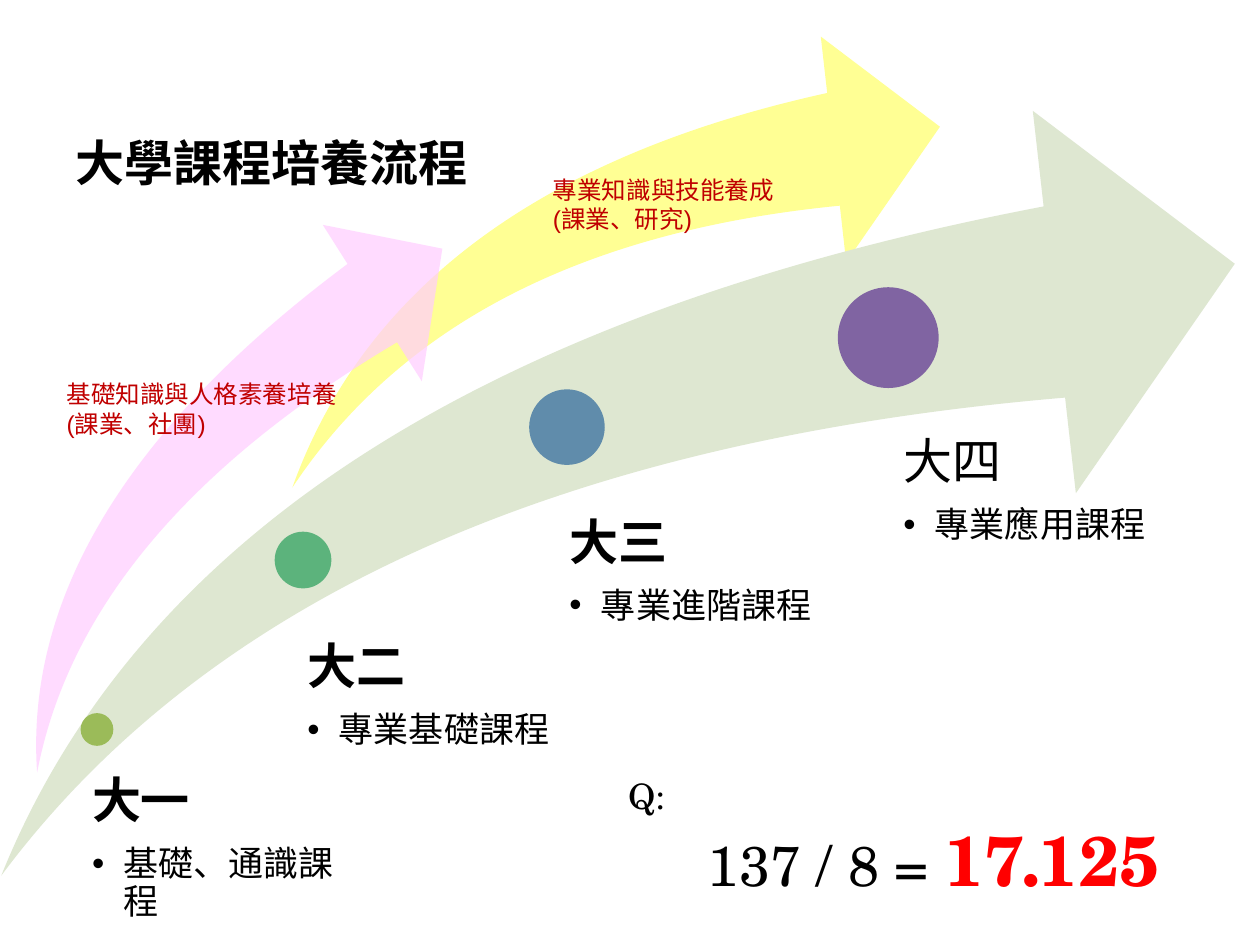
"""Build a slide showing how four years of university courses follow one another."""
from dataclasses import dataclass

from lxml.etree import SubElement
from pptx import Presentation
from pptx.dml.color import RGBColor
from pptx.enum.shapes import MSO_SHAPE
from pptx.enum.text import MSO_ANCHOR, MSO_AUTO_SIZE, PP_ALIGN
from pptx.oxml.ns import qn
from pptx.util import Pt

SCALE = 9144
SERIF, SANS = "TeX Gyre Schola", "Arial"
HUES = {
    "yellow": "FFFF00", "sage": "DEE7D1", "pink": "FFCCFF",
    "lime": "9BBB59", "green": "5CB37C", "blue": "608CAB", "purple": "8064A2",
    "black": "000000", "crimson": "C00000", "red": "FF0000",
}


@dataclass(frozen=True)
class Box:
    left: int
    top: int
    width: int
    height: int

    def emu(self) -> tuple[int, ...]:
        return tuple(n * SCALE for n in (self.left, self.top, self.width, self.height))


@dataclass(frozen=True)
class Arrow:
    box: Box
    hue: str
    alpha: int = 100
    turn: float = 0


@dataclass(frozen=True)
class Year:
    name: str
    course: str
    dot: Box
    hue: str
    box: Box
    inset: int
    bold: bool = True


@dataclass(frozen=True)
class Label:
    lines: str
    box: Box


ARROWS = [
    Arrow(Box(232, 29, 514, 358), "yellow", 42),
    Arrow(Box(1, 88, 979, 607), "sage"),
    Arrow(Box(-58, 233, 471, 292), "pink", 70, 334.1),
]
YEARS = [
    Year("大一", "基礎、通識課程", Box(64, 566, 26, 26), "lime", Box(59, 616, 232, 168), 14),
    Year("大二", "專業基礎課程", Box(218, 422, 45, 45), "green", Box(220, 510, 237, 263), 24),
    Year("大三", "專業進階課程", Box(420, 309, 60, 60), "blue", Box(420, 411, 237, 265), 32),
    Year("大四", "專業應用課程", Box(665, 228, 80, 80), "purple", Box(675, 347, 237, 326), 42, False),
]
LABELS = [
    Label("專業知識與技能養成\n(課業、研究)", Box(429, 134, 213, 57)),
    Label("基礎知識與人格素養培養\n(課業、社團)", Box(43, 296, 268, 57)),
]


def style(run, size: int, hue: str = "black", bold: bool = False, face: str = SERIF) -> None:
    font = run.font
    font.size, font.bold, font.name = Pt(size), bold, face
    font.color.rgb = RGBColor.from_string(HUES[hue])


def indent(para, left: int, first: int = 0) -> None:
    props = para._p.get_or_add_pPr()
    props.set("marL", str(left * SCALE))
    props.set("indent", str(first * SCALE))


def add_shape(slide, kind: MSO_SHAPE, box: Box, hue: str):
    shape = slide.shapes.add_shape(kind, *box.emu())
    shape.shadow.inherit = False
    shape.fill.solid()
    shape.fill.fore_color.rgb = RGBColor.from_string(HUES[hue])
    shape.line.fill.background()
    return shape


def add_arrow(slide, arrow: Arrow) -> None:
    shape = add_shape(slide, MSO_SHAPE.SWOOSH_ARROW, arrow.box, arrow.hue)
    shape.adjustments[0] = shape.adjustments[1] = 0.25
    shape.rotation = arrow.turn
    if arrow.alpha < 100:
        color = shape._element.spPr.find(f"{qn('a:solidFill')}/{qn('a:srgbClr')}")
        SubElement(color, qn("a:alpha")).set("val", str(arrow.alpha * 1000))


def add_text(slide, box: Box, text: str):
    frame = slide.shapes.add_textbox(*box.emu()).text_frame
    frame.word_wrap = True
    frame.text = text
    return frame


def add_year(slide, year: Year) -> None:
    add_shape(slide, MSO_SHAPE.OVAL, year.dot, year.hue)
    frame = add_text(slide, year.box, f"{year.name}\n{year.course}")
    frame.margin_left = year.inset * SCALE
    frame.margin_top = frame.margin_right = frame.margin_bottom = 0
    head, item = frame.paragraphs
    item.level = 1
    indent(item, 25, -25)
    props = item._p.get_or_add_pPr()
    SubElement(props, qn("a:buFont")).set("typeface", SANS)
    SubElement(props, qn("a:buChar")).set("char", "•")
    for para, size, gap, bold in ((head, 28, 9.8, year.bold), (item, 20, 3, False)):
        para.line_spacing, para.space_after = 0.9, Pt(gap)
        style(para.runs[0], size, bold=bold)


def add_label(slide, label: Label) -> None:
    frame = add_text(slide, label.box, label.lines)
    frame.auto_size = MSO_AUTO_SIZE.SHAPE_TO_FIT_TEXT
    for para in frame.paragraphs:
        style(para.runs[0], 14, "crimson", face=SANS)


def add_sum(slide) -> None:
    frame = add_text(slide, Box(489, 610, 475, 111), "Q:\n137 / 8 = ")
    frame.auto_size = MSO_AUTO_SIZE.SHAPE_TO_FIT_TEXT
    ask, reply = frame.paragraphs
    indent(reply, 63)
    style(ask.runs[0], 20)
    style(reply.runs[0], 32)
    total = reply.add_run()
    total.text = "17.125"
    style(total, 40, "red", True)


def set_title(slide) -> None:
    title = slide.shapes.title
    title.left, title.top, title.width, title.height = Box(50, 100, 900, 100).emu()
    frame = title.text_frame
    frame.text = "大學課程培養流程"
    frame.vertical_anchor = MSO_ANCHOR.TOP
    para = frame.paragraphs[0]
    para.alignment = PP_ALIGN.LEFT
    style(para.runs[0], 28, bold=True)


def main() -> None:
    deck = Presentation()
    deck.slide_width, deck.slide_height = 1000 * SCALE, 750 * SCALE
    slide = deck.slides.add_slide(deck.slide_layouts[5])
    set_title(slide)
    back, base, front = ARROWS
    add_arrow(slide, back)
    add_arrow(slide, base)
    for year in YEARS:
        add_year(slide, year)
    add_arrow(slide, front)
    for label in LABELS:
        add_label(slide, label)
    add_sum(slide)
    deck.save("out.pptx")


if __name__ == "__main__":
    main()
